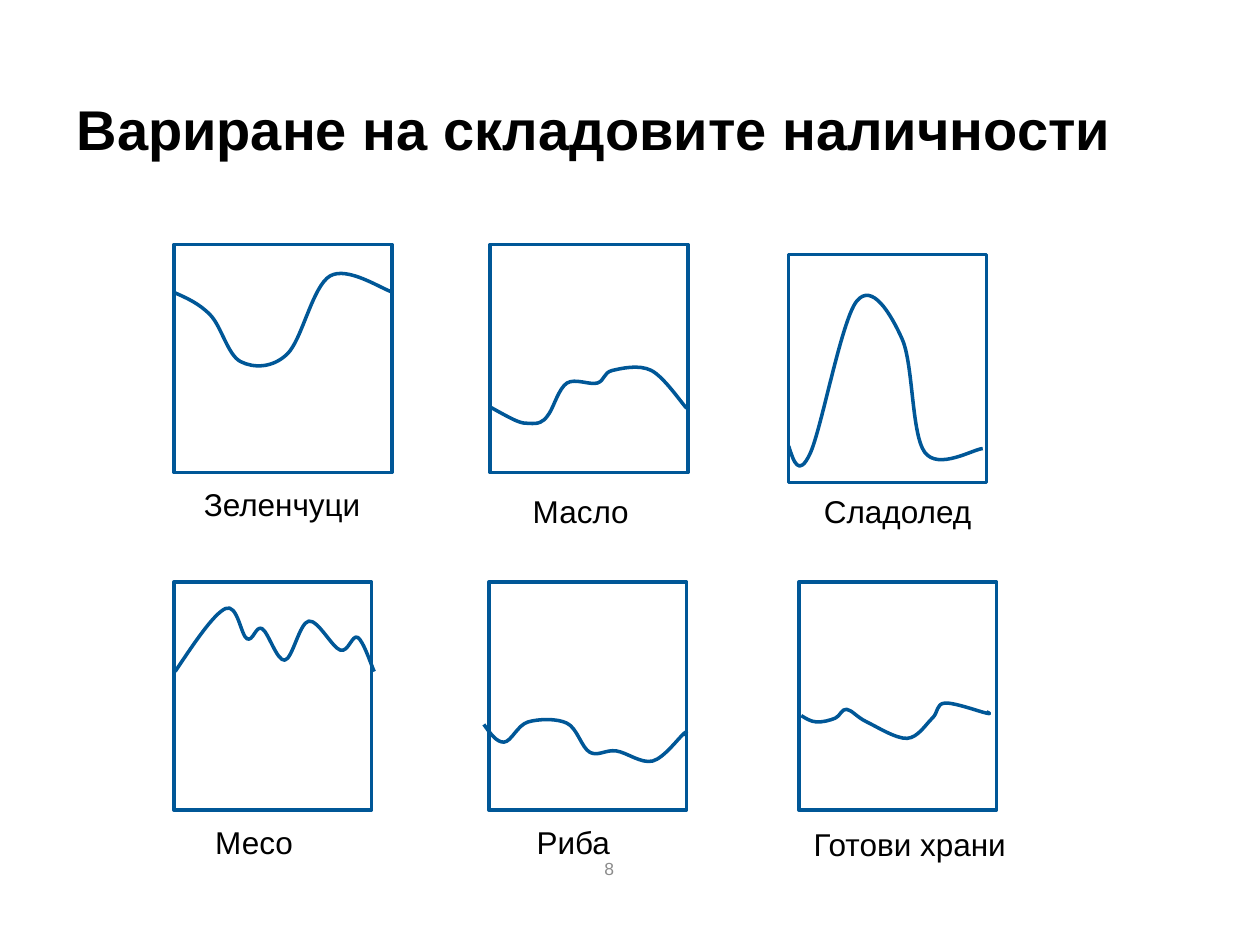
import dataclasses
import typing

import pptx
import pptx.dml.color
import pptx.enum.shapes
import pptx.enum.text
import pptx.oxml.ns
import pptx.util
from lxml import etree

Inches = pptx.util.Inches
Pt = pptx.util.Pt
Color = pptx.dml.color.RGBColor
Align = pptx.enum.text.PP_ALIGN
Anchor = pptx.enum.text.MSO_ANCHOR
qn = pptx.oxml.ns.qn
Point = tuple[float, float]

BLUE = Color(0x00, 0x57, 0x97)
BLACK = Color(0x00, 0x00, 0x00)
GRAY = Color(0x8C, 0x8C, 0x8C)
HEIGHT = 1.81


@dataclasses.dataclass(frozen=True)
class Label:
    text: str
    left: float
    top: float
    width: float
    height: float = 0.4
    size: int = 18
    color: Color = BLACK
    bold: bool = False
    wrap: bool = False
    align: typing.Any = None
    anchor: typing.Any = Anchor.TOP


@dataclasses.dataclass(frozen=True)
class Panel:
    left: float
    top: float
    width: float
    label: Label
    knots: list[Point]


TITLE = Label("Вариране на складовите наличности", 0.51, 0.21, 8.5, 1.61,
              size=32, bold=True, wrap=True, anchor=Anchor.MIDDLE)
NUMBER = Label("8", 4.1, 6.76, 1.47, size=10, color=GRAY, wrap=True,
               align=Align.CENTER)

PANELS = [
    Panel(1.38, 1.94, 1.73, Label("Зеленчуци", 1.52, 3.8, 1.46),
          [(1.38, 2.32), (1.67, 2.5), (1.91, 2.87), (2.28, 2.81),
           (2.62, 2.19), (3.12, 2.32)]),
    Panel(3.89, 1.94, 1.57, Label("Масло", 4.13, 3.86, 0.97),
          [(3.89, 3.23), (4.1, 3.34), (4.2, 3.36), (4.29, 3.35),
           (4.36, 3.28), (4.5, 3.04), (4.74, 3.04), (4.86, 2.94),
           (5.17, 2.94), (5.45, 3.24)]),
    Panel(6.26, 2.02, 1.57, Label("Сладолед", 6.44, 3.86, 1.38),
          [(6.26, 3.54), (6.43, 3.6), (6.8, 2.39), (7.16, 2.69),
           (7.34, 3.59), (7.8, 3.56)]),
    Panel(1.38, 4.62, 1.57, Label("Месо", 1.61, 6.48, 0.82),
          [(1.39, 5.33), (1.79, 4.83), (1.96, 5.07), (2.08, 4.99),
           (2.26, 5.24), (2.45, 4.93), (2.7, 5.16), (2.84, 5.06),
           (2.97, 5.33)]),
    Panel(3.88, 4.62, 1.57, Label("Риба", 4.16, 6.48, 0.79),
          [(3.84, 5.75), (4, 5.89), (4.19, 5.73), (4.5, 5.74),
           (4.68, 5.97), (4.89, 5.96), (5.18, 6.04), (5.43, 5.82),
           (5.43, 5.84)]),
    Panel(6.34, 4.62, 1.57, Label("Готови храни", 6.36, 6.5, 1.74),
          [(6.36, 5.68), (6.48, 5.73), (6.63, 5.7), (6.72, 5.63),
           (6.88, 5.73), (7.2, 5.86), (7.4, 5.7), (7.5, 5.58),
           (7.83, 5.66), (7.83, 5.65)]),
]


def write(shapes: typing.Any, label: Label) -> None:
    box = shapes.add_textbox(Inches(label.left), Inches(label.top),
                             Inches(label.width), Inches(label.height))
    frame = box.text_frame
    frame.word_wrap = label.wrap
    if not label.wrap:
        frame.auto_size = pptx.enum.text.MSO_AUTO_SIZE.SHAPE_TO_FIT_TEXT
    frame.vertical_anchor = label.anchor
    para = frame.paragraphs[0]
    para.text = label.text
    para.alignment = label.align
    font = para.font
    font.name = "Arial"
    font.size = Pt(label.size)
    font.bold = label.bold
    font.color.rgb = label.color


def style(shape: typing.Any) -> None:
    shape.shadow.inherit = False
    shape.fill.background()
    shape.line.color.rgb = BLUE
    shape.line.width = Pt(2)


def frame(shapes: typing.Any, panel: Panel) -> None:
    kind = pptx.enum.shapes.MSO_SHAPE.RECTANGLE
    style(shapes.add_shape(kind, Inches(panel.left), Inches(panel.top),
                           Inches(panel.width), Inches(HEIGHT)))


def slope(prev: Point, here: Point, after: Point, sign: int) -> Point:
    return (here[0] + sign * (after[0] - prev[0]) / 6,
            here[1] + sign * (after[1] - prev[1]) / 6)


def bend(shape: typing.Any) -> None:
    root = shape._element
    spots = [(int(pt.get("x")), int(pt.get("y"))) for pt in root.iter(qn("a:pt"))]
    ends = [spots[0], *spots, spots[-1]]
    for i, line in enumerate(list(root.iter(qn("a:lnTo")))):
        prev, start, stop, after = ends[i:i + 4]
        second = slope(start, stop, after, -1)
        if i == 0:
            first = ((start[0] + second[0]) / 2, (start[1] + second[1]) / 2)
        else:
            first = slope(prev, start, stop, 1)
        curve = etree.Element(qn("a:cubicBezTo"))
        for x, y in (first, second, stop):
            etree.SubElement(curve, qn("a:pt"), x=str(round(x)), y=str(round(y)))
        line.getparent().replace(line, curve)


def trace(shapes: typing.Any, panel: Panel) -> None:
    knots = [(Inches(x), Inches(y)) for x, y in panel.knots]
    maker = shapes.build_freeform(*knots[0])
    maker.add_line_segments(knots[1:], close=False)
    shape = maker.convert_to_shape()
    style(shape)
    bend(shape)


def main() -> None:
    deck = pptx.Presentation()
    deck.slide_width = Inches(10)
    deck.slide_height = Inches(7.5)
    shapes = deck.slides.add_slide(deck.slide_layouts[6]).shapes
    write(shapes, TITLE)
    write(shapes, NUMBER)
    for panel in PANELS:
        frame(shapes, panel)
    for panel in PANELS:
        write(shapes, panel.label)
    for panel in PANELS:
        trace(shapes, panel)
    deck.save("out.pptx")


if __name__ == "__main__":
    main()
